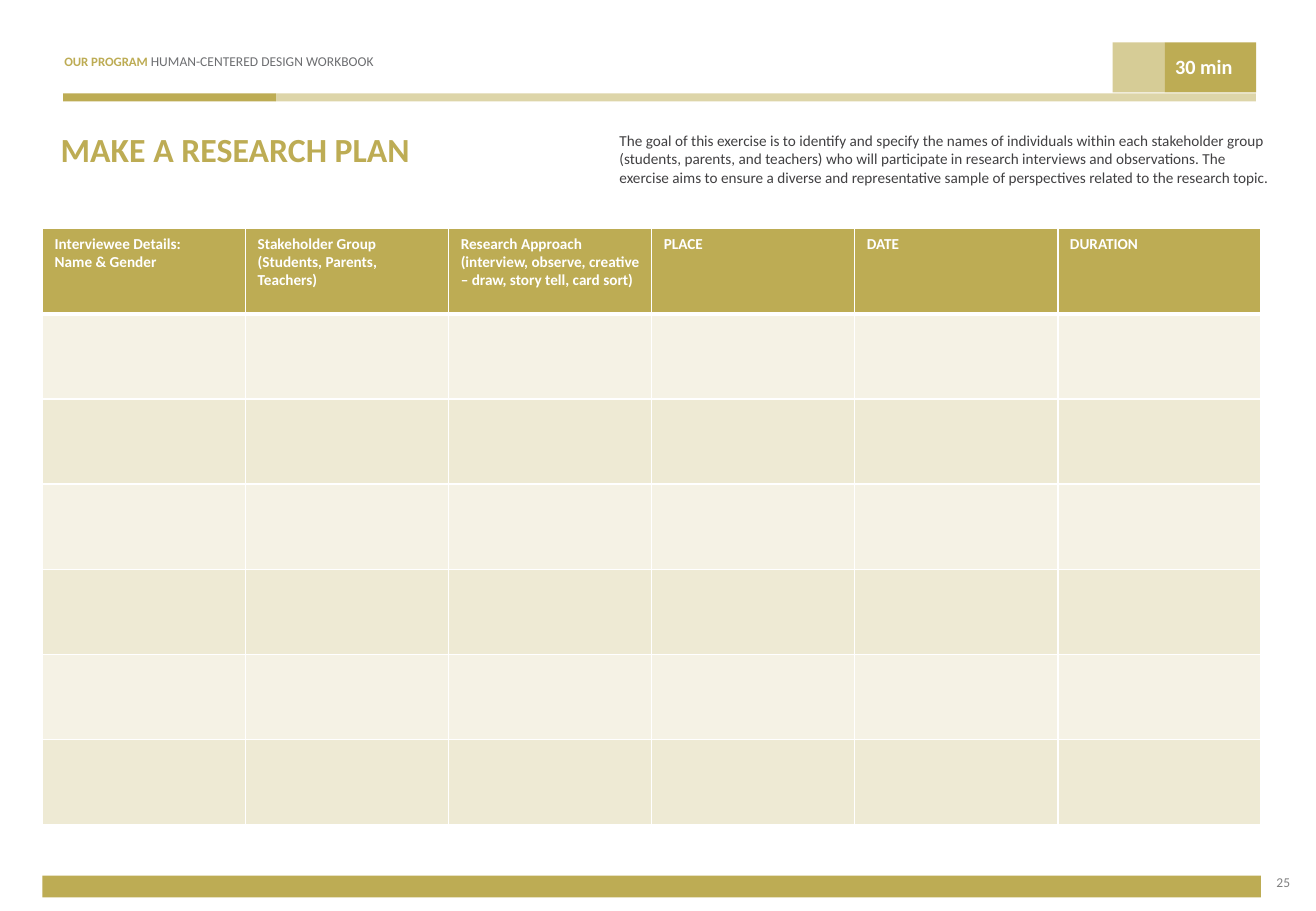
"""Build the research plan worksheet slide."""
from lxml import etree
from pptx import Presentation
from pptx.dml.color import RGBColor
from pptx.enum import shapes, text
from pptx.oxml import ns
from pptx.util import Pt

GOLD, WHITE = "BDAC54", "FFFFFF"
LEFT, WIDTH = 25.2, 722.2
HEADINGS = [
    "Interviewee Details:\nName & Gender",
    "Stakeholder Group (Students, Parents, Teachers)",
    "Research Approach\n(interview, observe, creative – draw, story tell, card sort)",
    "PLACE",
    "DATE",
    "DURATION",
]
ROWS = 7
GOAL = (
    "The goal of this exercise is to identify and specify the names of individuals "
    "within each stakeholder group (students, parents, and teachers) who will "
    "participate in research interviews and observations. The exercise aims to ensure "
    "a diverse and representative sample of perspectives related to the research topic."
)


def color(value):
    """Turn a hex string into a colour."""
    return RGBColor.from_string(value)


def paint(fill, properties, opacity=100):
    """Fill an object with gold at the given percentage of opacity."""
    fill.solid()
    fill.fore_color.rgb = color(GOLD)
    if opacity < 100:
        gold = properties.find(ns.qn("a:solidFill")).find(ns.qn("a:srgbClr"))
        etree.SubElement(gold, ns.qn("a:alpha")).set("val", str(opacity * 1000))


def style(run, size, value, bold=False):
    """Format one run."""
    run.font.name = "Calibri"
    run.font.size = Pt(size)
    run.font.bold = bold
    run.font.color.rgb = color(value)


def set_insets(frame, left=0, top=0):
    """Set the left and top insets and clear the others."""
    frame.margin_left, frame.margin_top = Pt(left), Pt(top)
    frame.margin_right = frame.margin_bottom = 0


def add_bar(slide, left, top, width, height, opacity=100):
    """Add a gold rectangle without an outline."""
    bar = slide.shapes.add_shape(
        shapes.MSO_SHAPE.RECTANGLE, Pt(left), Pt(top), Pt(width), Pt(height))
    bar.shadow.inherit = False
    bar.line.fill.background()
    paint(bar.fill, bar.element.spPr, opacity)
    return bar


def add_text(slide, left, top, width, height, runs, inset_left=0, inset_top=0):
    """Add a wrapped text box of (words, size, colour, bold) runs."""
    box = slide.shapes.add_textbox(Pt(left), Pt(top), Pt(width), Pt(height))
    frame = box.text_frame
    frame.word_wrap = True
    set_insets(frame, inset_left, inset_top)
    for words, *look in runs:
        run = frame.paragraphs[0].add_run()
        run.text = words
        style(run, *look)
    return frame


def add_borders(cell, bottom):
    """Give a cell white borders, with its own bottom width in points."""
    properties = cell._tc.get_or_add_tcPr()
    for side, width in (("L", 1), ("R", 1), ("T", 1), ("B", bottom)):
        line = etree.SubElement(properties, ns.qn(f"a:ln{side}"), w=str(Pt(width)))
        solid = etree.SubElement(line, ns.qn("a:solidFill"))
        etree.SubElement(solid, ns.qn("a:srgbClr"), val=WHITE)


def add_plan_table(slide):
    """Add the plan table with a gold heading row and alternating tints."""
    table = slide.shapes.add_table(
        ROWS, len(HEADINGS), Pt(LEFT), Pt(135.5), Pt(WIDTH), Pt(ROWS * 50.5)).table
    for row in range(ROWS):
        opacity = 100 if row == 0 else 15 if row % 2 else 25
        for column, heading in enumerate(HEADINGS):
            cell = table.cell(row, column)
            add_borders(cell, 1 if row else 3)
            paint(cell.fill, cell._tc.tcPr, opacity)
            if row == 0:
                cell.text_frame.text = heading
                for paragraph in cell.text_frame.paragraphs:
                    style(paragraph.runs[0], 9, WHITE, True)


def add_time_badge(slide):
    """Add the two-part badge with the time for the exercise."""
    badge = add_bar(slide, 690.5, 25.2, 54, 29.6)
    frame = badge.text_frame
    set_insets(frame, 6, 7.2)
    frame.vertical_anchor = text.MSO_ANCHOR.TOP
    frame.text = "30 min"
    frame.paragraphs[0].alignment = text.PP_ALIGN.LEFT
    style(frame.paragraphs[0].runs[0], 12, WHITE, True)
    add_bar(slide, 659.5, 25.2, 31, 29.6, 61)


def main():
    """Build and save the slide."""
    presentation = Presentation()
    presentation.slide_width, presentation.slide_height = Pt(780), Pt(540)
    slide = presentation.slides.add_slide(presentation.slide_layouts[6])

    number = add_text(slide, 742.3, 514, 29.5, 18, [("25", 8, "808080")])
    number.margin_right = Pt(7.2)
    number.vertical_anchor = text.MSO_ANCHOR.MIDDLE
    number.paragraphs[0].alignment = text.PP_ALIGN.RIGHT

    add_bar(slide, 37.4, 55.3, 126.1, 4.8)
    add_bar(slide, 163.5, 55.3, 581, 4.8, 50)
    add_text(slide, 36.7, 30.2, 218, 11, [
        ("OUR PROGRAM ", 7.6, GOLD, True),
        ("HUMAN-CENTERED DESIGN WORKBOOK", 8, "6D6E71"),
    ], 1.4, 1.4)
    add_text(slide, 36, 76.3, 314, 24.5, [("MAKE A RESEARCH PLAN", 20, GOLD, True)])
    add_text(slide, 367.2, 70.6, 385.5, 40, [(GOAL, 9, "414042")], inset_top=7.2)
    add_plan_table(slide)
    add_time_badge(slide)
    add_bar(slide, LEFT, 519, WIDTH, 13)
    presentation.save("out.pptx")


if __name__ == "__main__":
    main()
